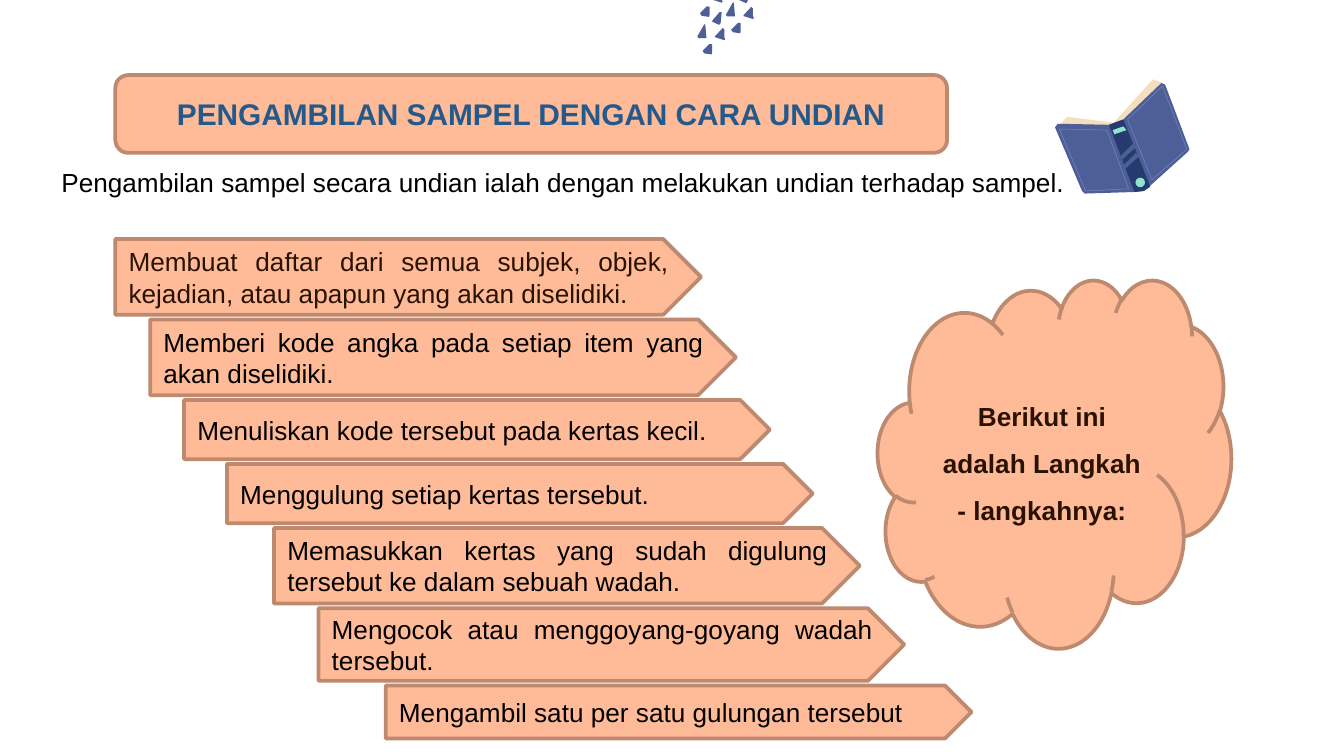
import pptx
import pptx.dml.color
import pptx.enum.shapes
import pptx.enum.text
import pptx.util

Cm = pptx.util.Cm
Pt = pptx.util.Pt
SHAPE = pptx.enum.shapes.MSO_SHAPE
ALIGN = pptx.enum.text.PP_ALIGN
ANCHOR = pptx.enum.text.MSO_ANCHOR

PEACH, BROWN = "FFBB98", "BD8A70"
BLUE, NAVY, STITCH = "4E5F97", "253B6E", "758AC6"
CREAM, MINT = "F3DEBF", "91E0D2"
DARK, BLACK, TITLE = "291202", "000000", "24598B"

STEP_WIDTH, STEP_TOP, STEP_GAP = 11.07, 4.52, 0.09
STEPS = [
    (2.18, 1.43, DARK, "Membuat daftar dari semua subjek, objek, kejadian, atau apapun yang akan diselidiki."),
    (2.84, 1.43, BLACK, "Memberi kode angka pada setiap item yang akan diselidiki."),
    (3.48, 1.12, BLACK, "Menuliskan kode tersebut pada kertas kecil."),
    (4.29, 1.12, BLACK, "Menggulung setiap kertas tersebut."),
    (5.18, 1.43, BLACK, "Memasukkan kertas yang sudah digulung tersebut ke dalam sebuah wadah."),
    (6.02, 1.37, BLACK, "Mengocok atau menggoyang-goyang wadah tersebut."),
    (7.29, 1.0, BLACK, "Mengambil satu per satu gulungan tersebut"),
]

SPECKS = [
    ([(0.17, 0.24), (0.15, 0), (0.13, 0), (0, 0.23), (0.02, 0.26), (0.17, 0.26)],
     [(13.18, 0.46), (13.72, 0.05)]),
    ([(0.18, 0.18), (0.18, 0.03), (0.15, 0), (0, 0.16), (0.02, 0.18), (0.18, 0.23), (0.2, 0.21)],
     [(13.51, 0.53), (14.05, 0.13), (13.46, -0.18)]),
    ([(0.18, 0.18), (0.18, 0.03), (0.13, 0.02), (0.05, 0.1), (0, 0.15), (0.03, 0.2), (0.17, 0.22)],
     [(13.28, 0.81), (13.82, 0.41), (13.23, 0.1)]),
    ([(0, 0.18), (0.13, 0.24), (0.16, 0.21), (0.18, 0), (0.14, 0), (0.01, 0.15)],
     [(13.46, 0.23), (13.97, -0.18)]),
]

PAGES = [
    [(21.03, 2.34), (21.79, 1.5), (21.97, 1.57), (21.29, 2.34)],
    [(21.21, 2.34), (20.17, 2.21), (19.99, 2.39), (21.11, 2.44)],
]
COVER = [(21.95, 1.57), (21.23, 2.26), (20.96, 2.36), (19.99, 2.34), (19.94, 2.41),
         (20.45, 3.61), (20.5, 3.66), (21.44, 3.63), (21.62, 3.61), (21.74, 3.51),
         (22.45, 2.87), (22.48, 2.82), (22.02, 1.6)]
SPINE = [(21.23, 2.26), (20.96, 2.36), (21.44, 3.63), (21.62, 3.61), (21.74, 3.53)]
SEAMS = [
    [(20.02, 2.44), (20.92, 2.46), (21.33, 3.57), (20.52, 3.61)],
    [(21.31, 2.26), (21.97, 1.63), (22.43, 2.82), (21.77, 3.4)],
]
LABEL = [(21.03, 2.46), (21.23, 2.39), (21.29, 2.46), (21.06, 2.54)]
BAND = [(21.21, 3.02), (21.46, 2.79), (21.41, 2.72), (21.18, 2.95)]


def rgb(color):
    return pptx.dml.color.RGBColor.from_string(color)


def paint(sp, fill=None, line=None, width=2):
    sp.shadow.inherit = False
    if fill:
        sp.fill.solid()
        sp.fill.fore_color.rgb = rgb(fill)
    else:
        sp.fill.background()
    if line:
        sp.line.color.rgb = rgb(line)
        sp.line.width = Pt(width)
    else:
        sp.line.fill.background()


def write(sp, text, color, size=14, bold=False, align=ALIGN.JUSTIFY):
    sp.text_frame.word_wrap = True
    p = sp.text_frame.paragraphs[0]
    p.alignment = align
    r = p.add_run()
    r.text = text
    r.font.name = "Arial"
    r.font.size = Pt(size)
    r.font.bold = bold
    r.font.color.rgb = rgb(color)
    return p


def add_box(s, kind, x, y, w, h, fill=PEACH, line=BROWN):
    sp = s.shapes.add_shape(kind, Cm(x), Cm(y), Cm(w), Cm(h))
    paint(sp, fill, line)
    sp.text_frame.vertical_anchor = ANCHOR.MIDDLE
    return sp


def add_outline(s, points, fill=None, line=None, dx=0, dy=0):
    places = [(Cm(x + dx), Cm(y + dy)) for x, y in points]
    builder = s.shapes.build_freeform(*places[0])
    builder.add_line_segments(places[1:], close=True)
    paint(builder.convert_to_shape(), fill, line, 0.25)


def add_specks(s):
    for points, places in SPECKS:
        for x, y in places:
            add_outline(s, points, BLUE, dx=x, dy=y)


def add_book(s):
    for page in PAGES:
        add_outline(s, page, CREAM)
    add_outline(s, COVER, BLUE)
    add_outline(s, SPINE, NAVY)
    for seam in SEAMS:
        add_outline(s, seam, line=STITCH)
    add_box(s, SHAPE.OVAL, 21.46, 3.36, 0.18, 0.18, MINT, None)
    add_outline(s, LABEL, MINT)
    add_outline(s, BAND, BLUE)
    add_outline(s, BAND, BLUE, dx=0.06, dy=0.17)


def add_steps(s):
    top = STEP_TOP
    for left, height, color, text in STEPS:
        sp = add_box(s, SHAPE.PENTAGON, left, top, STEP_WIDTH, height)
        write(sp, text, color)
        top += height + STEP_GAP


def main():
    prs = pptx.Presentation()
    prs.slide_width, prs.slide_height = Cm(25.4), Cm(14.29)
    s = prs.slides.add_slide(prs.slide_layouts[6])
    add_specks(s)
    add_book(s)
    title = add_box(s, SHAPE.ROUNDED_RECTANGLE, 2.18, 1.42, 15.72, 1.47)
    write(title, "PENGAMBILAN SAMPEL DENGAN CARA UNDIAN", TITLE, 16, True, ALIGN.CENTER)
    intro = s.shapes.add_textbox(Cm(0.91), Cm(3.02), Cm(21.16), Cm(0.86))
    write(intro, "Pengambilan sampel secara undian ialah dengan melakukan undian terhadap sampel.", BLACK)
    add_steps(s)
    cloud = add_box(s, SHAPE.CLOUD, 16.59, 5.28, 6.68, 6.96)
    p = write(cloud, "Berikut ini adalah Langkah - langkahnya:", DARK, bold=True, align=ALIGN.CENTER)
    p.line_spacing = 1.5
    prs.save("out.pptx")


if __name__ == "__main__":
    main()
